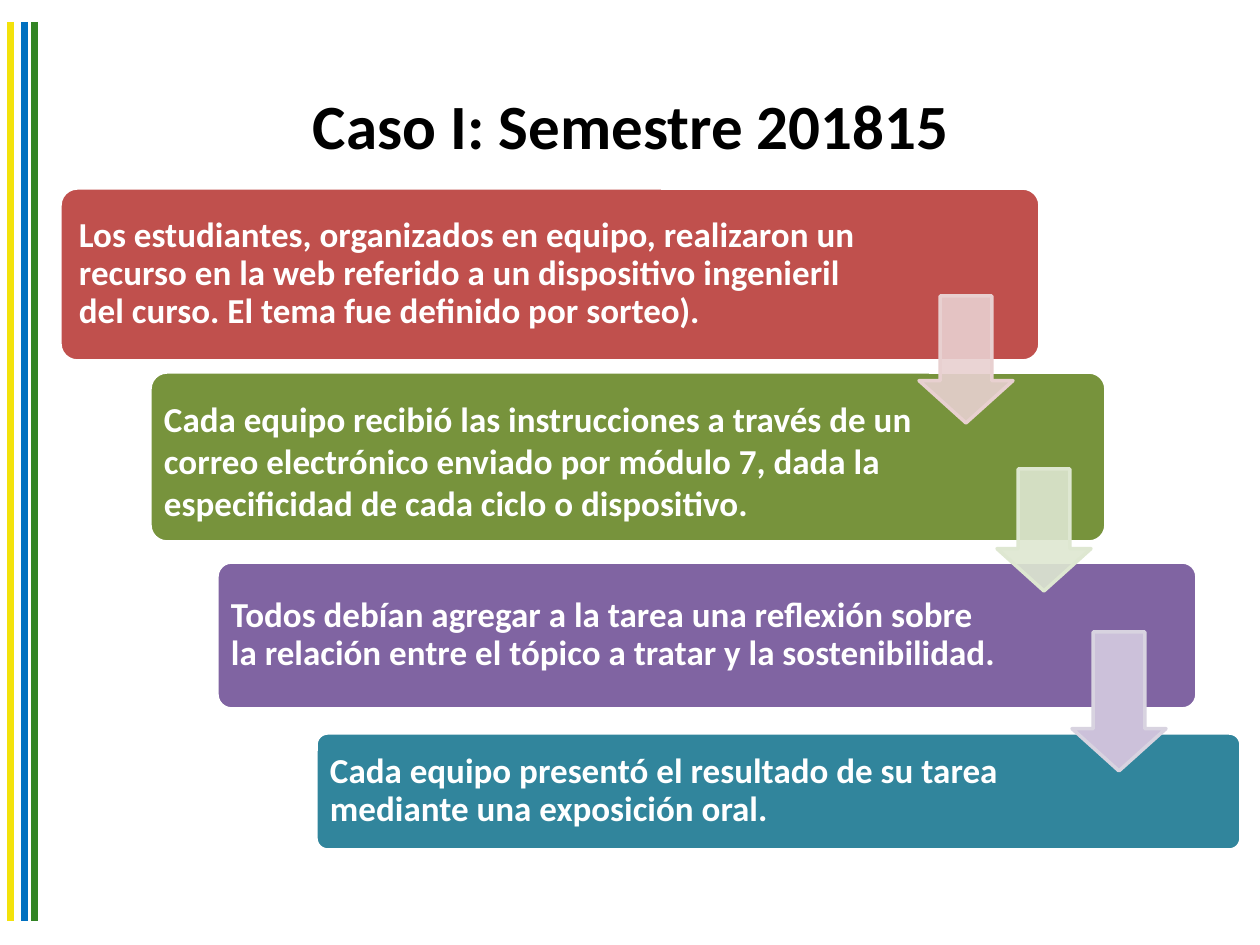
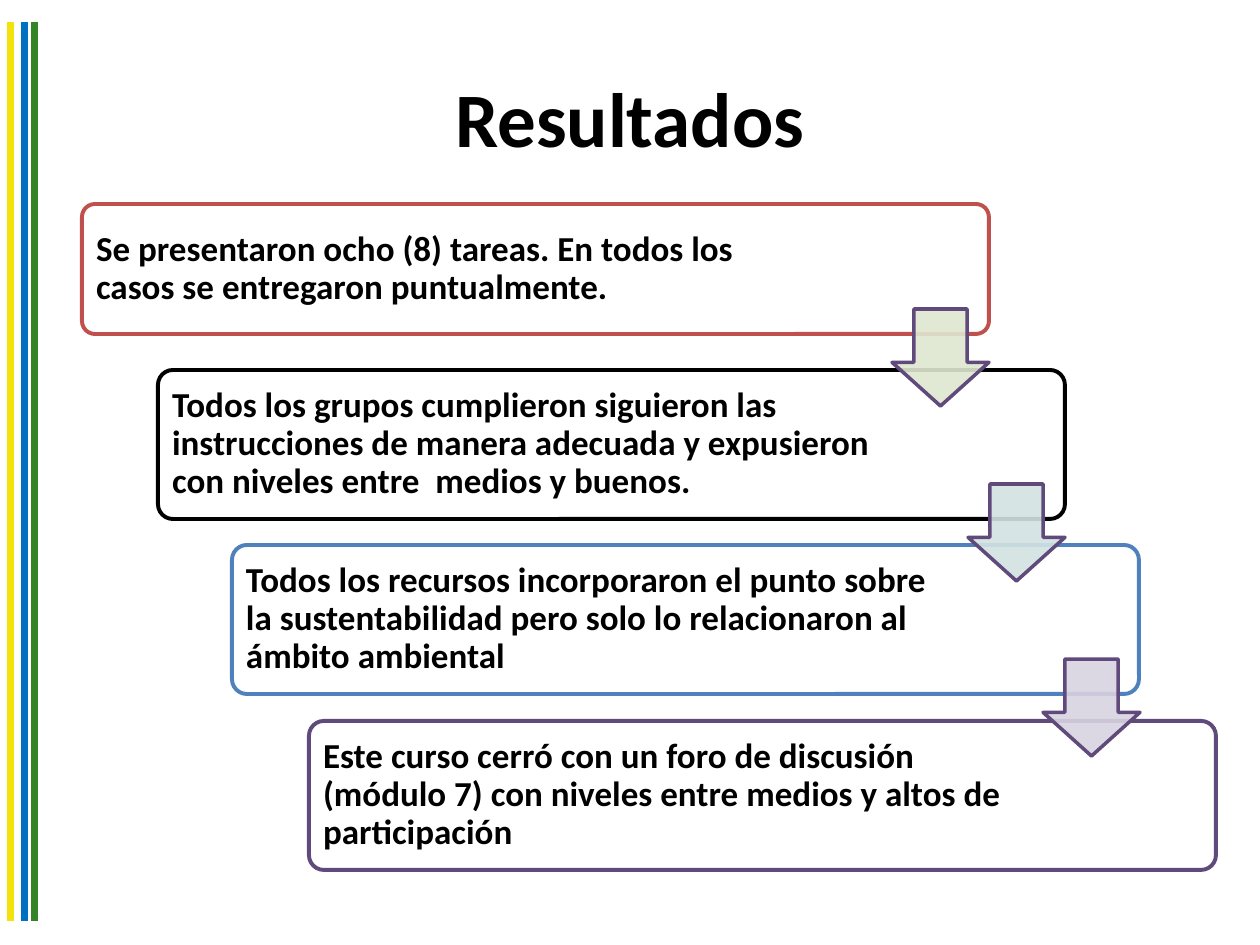
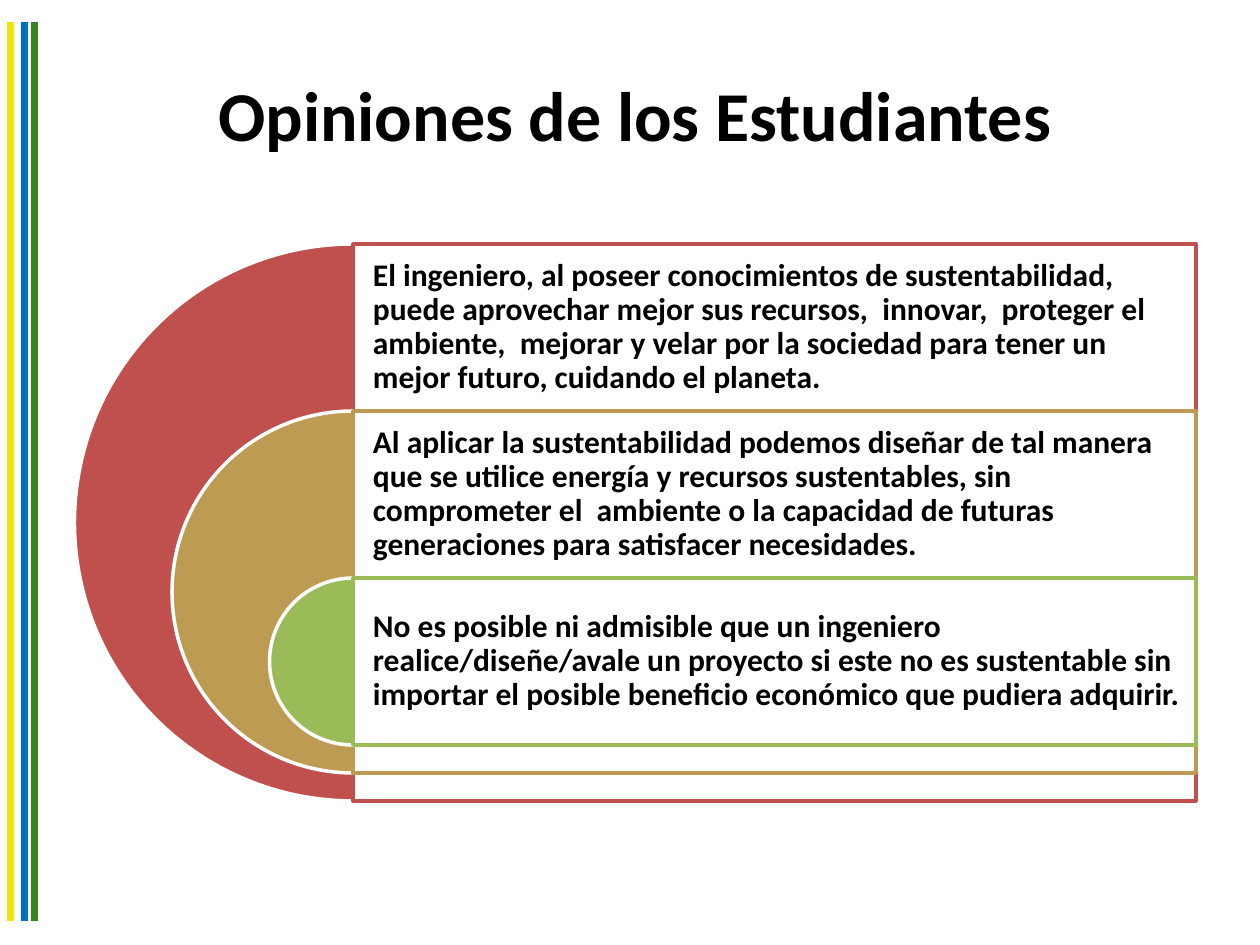
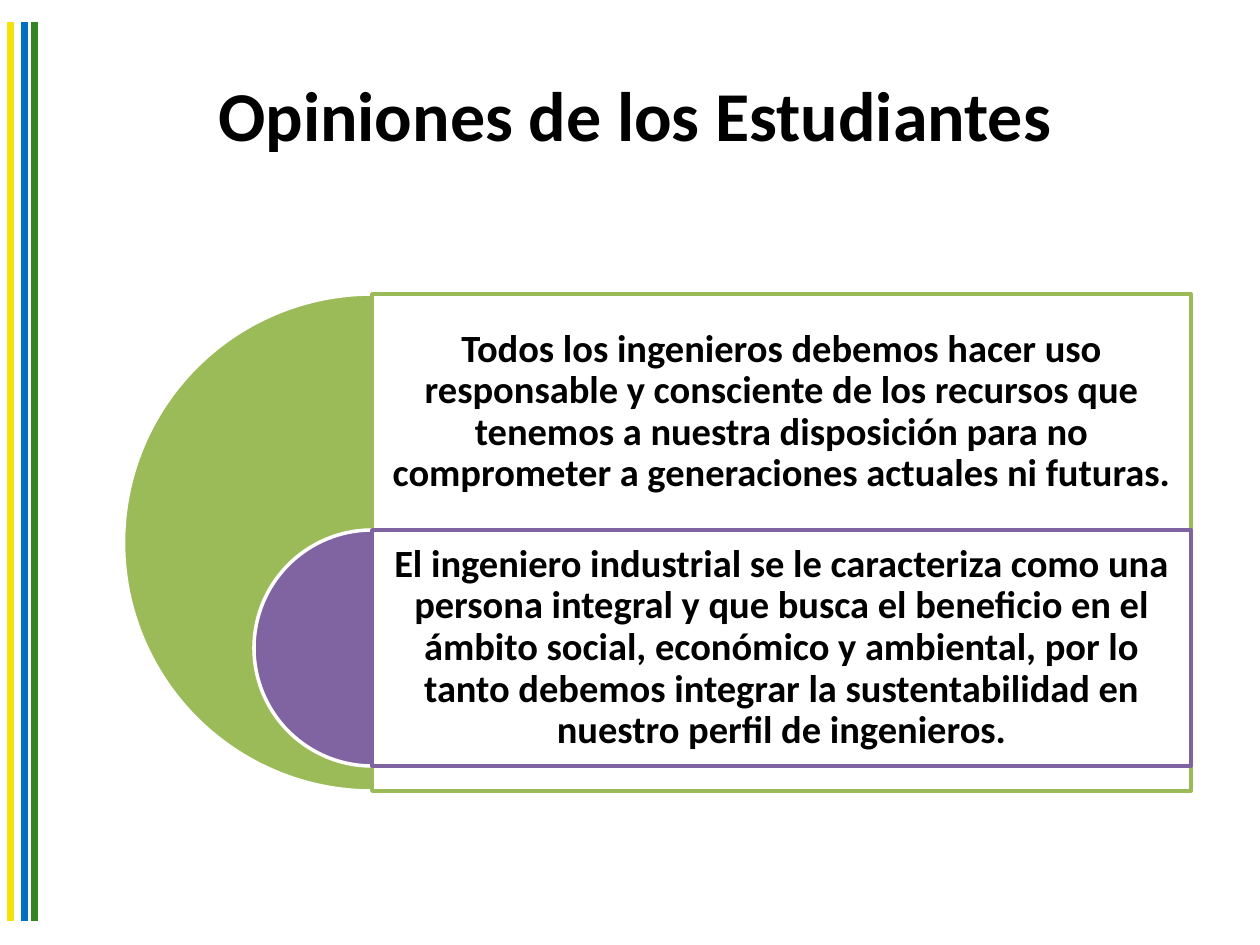
from lxml.etree import SubElement
from pptx import Presentation
from pptx.dml.color import RGBColor
from pptx.enum.shapes import MSO_CONNECTOR, MSO_SHAPE
from pptx.enum.text import MSO_ANCHOR, PP_ALIGN
from pptx.oxml.ns import qn
from pptx.util import Emu, Pt

FONT = "Calibri"
PX_PER_INCH = 126
TITLE_ONLY = 5

COLORS = {
    "white": "FFFFFF", "black": "000000",
    "stripe_yellow": "F3E20B", "stripe_blue": "0070C0", "stripe_green": "328424",
    "red": "C0504D", "olive": "77933C", "purple": "8064A2", "teal": "31859C",
    "blue": "4F81BD", "violet": "604A7B", "gold": "BD9B53", "green": "9BBB59",
    "pale_red": "E8D0D0", "pale_green": "DEE7D1", "pale_teal": "D2E3E2",
    "pale_purple": "D8D3E0", "lilac": "CCC1DA",
}

STRIPES = [(11, "stripe_yellow"), (25, "stripe_blue"), (35, "stripe_green")]
STRIPE_TOP, STRIPE_BOTTOM = 22, 921

STAIRS = [
    {
        "title": ("Caso I: Semestre 201815", 36, (64, 45, 1134, 158)),
        "text_color": "white",
        "steps": [
            ("Los estudiantes, organizados en equipo, realizaron un recurso en la web referido a un "
             "dispositivo ingenieril del curso. El tema fue definido por sorteo).",
             (60, 188, 980, 173), 801, "red", "white", (15, 5, 0, 5), 0.9),
            ("Cada equipo recibió las instrucciones a través de un correo electrónico enviado por "
             "módulo 7, dada la especificidad de cada ciclo o dispositivo.",
             (150, 372, 956, 170), 775, "olive", "white", (10, 14, 10, 6), 1.0),
            ("Todos debían agregar a la tarea una reflexión sobre la relación entre el tópico a "
             "tratar y la sostenibilidad.",
             (217, 562, 980, 147), 791, "purple", "white", (10, 10, 10, 10), 0.9),
            ("Cada equipo presentó el resultado de su tarea mediante una exposición oral.",
             (316, 733, 925, 117), 746, "teal", "white", (10, 10, 10, 10), 0.9),
        ],
        "step_line": 2,
        "arrows": [
            ((919, 296, 94, 127), "pale_red", "pale_red", 90),
            ((997, 469, 94, 122), "pale_green", "pale_green", 90),
            ((1072, 632, 94, 139), "lilac", "pale_purple", 100),
        ],
    },
    {
        "title": ("Resultados", 44, (63, 38, 1134, 158)),
        "text_color": "black",
        "steps": [
            ("Se presentaron ocho (8) tareas. En todos los casos se entregaron puntualmente.",
             (82, 204, 907, 130), 736, "white", "red", (10, 10, 10, 10), 0.9),
            ("Todos los grupos cumplieron siguieron las instrucciones de manera adecuada y "
             "expusieron con niveles entre  medios y buenos.",
             (158, 370, 907, 149), 726, "white", "black", (10, 10, 10, 10), 0.9),
            ("Todos los recursos incorporaron el punto sobre la sustentabilidad pero solo lo "
             "relacionaron al ámbito ambiental",
             (232, 545, 907, 149), 727, "white", "blue", (10, 10, 10, 10), 0.9),
            ("Este curso cerró con un foro de discusión (módulo 7) con niveles entre medios y altos "
             "de participación",
             (309, 721, 907, 149), 726, "white", "violet", (10, 10, 10, 10), 0.9),
        ],
        "step_line": 2.25,
        "arrows": [
            ((892, 309, 97, 97), "pale_green", "violet", 90),
            ((968, 484, 97, 97), "pale_teal", "violet", 90),
            ((1043, 659, 97, 97), "pale_purple", "violet", 90),
        ],
    },
]

OPINIONS_TITLE = ("Opiniones de los Estudiantes", 40, (68, 55, 1134, 117))
OPINIONS = [
    {
        "left": 353, "top": 244, "width": 843, "band": 167, "rim": 28,
        "size": 18, "align": PP_ALIGN.LEFT, "insets": (20, 9, 9, 9),
        "items": [
            ("El ingeniero, al poseer conocimientos de sustentabilidad, puede aprovechar mejor sus "
             "recursos,  innovar,  proteger el ambiente,  mejorar y velar por la sociedad para tener "
             "un mejor futuro, cuidando el planeta.", "red"),
            ("Al aplicar la sustentabilidad podemos diseñar de tal manera que se utilice energía y "
             "recursos sustentables, sin comprometer el  ambiente o la capacidad de futuras "
             "generaciones para satisfacer necesidades.", "gold"),
            ("No es posible ni admisible que un ingeniero realice/diseñe/avale un proyecto si este no "
             "es sustentable sin importar el posible beneficio económico que pudiera adquirir.",
             "green"),
        ],
    },
    {
        "left": 372, "top": 294, "width": 819, "band": 236, "rim": 25,
        "size": 22, "align": PP_ALIGN.CENTER, "insets": (11, 11, 11, 11),
        "items": [
            ("Todos los ingenieros debemos hacer uso responsable y consciente de los recursos que "
             "tenemos a nuestra disposición para no comprometer a generaciones actuales ni futuras.",
             "green"),
            ("El ingeniero industrial se le caracteriza como una persona integral y que busca el "
             "beneficio en el ámbito social, económico y ambiental, por lo tanto debemos integrar la "
             "sustentabilidad en nuestro perfil de ingenieros.", "purple"),
        ],
    },
]


def px(value):
    return Emu(round(value * 914400 / PX_PER_INCH))


def place(frame):
    return [px(value) for value in frame]


def rgb(name):
    return RGBColor.from_string(COLORS[name])


def format_text(text_frame, text, size, color, align, spacing=1.0):
    text_frame.text = text
    text_frame.word_wrap = True
    text_frame.vertical_anchor = MSO_ANCHOR.MIDDLE
    para = text_frame.paragraphs[0]
    para.alignment = align
    para.line_spacing = spacing
    for span in para.runs:
        span.font.name = FONT
        span.font.size = Pt(size)
        span.font.bold = True
        span.font.color.rgb = rgb(color)


def add_text(page, frame, text, size, color, align, insets, spacing=0.9):
    text_frame = page.shapes.add_textbox(*place(frame)).text_frame
    (text_frame.margin_left, text_frame.margin_top,
     text_frame.margin_right, text_frame.margin_bottom) = place(insets)
    format_text(text_frame, text, size, color, align, spacing)


def add_figure(page, kind, frame, fill, line, line_width=2, adjustments=(), opacity=100):
    shape = page.shapes.add_shape(kind, *place(frame))
    shape.shadow.inherit = False
    for index, value in enumerate(adjustments):
        shape.adjustments[index] = value
    shape.fill.solid()
    shape.fill.fore_color.rgb = rgb(fill)
    shape.line.color.rgb = rgb(line)
    shape.line.width = Pt(line_width)
    if opacity < 100:
        color = shape.element.spPr.find(qn("a:solidFill"))[0]
        SubElement(color, qn("a:alpha")).set("val", str(opacity * 1000))


def add_page(deck, title):
    text, size, frame = title
    page = deck.slides.add_slide(deck.slide_layouts[TITLE_ONLY])
    heading = page.shapes.title
    heading.left, heading.top, heading.width, heading.height = place(frame)
    format_text(heading.text_frame, text, size, "black", PP_ALIGN.CENTER)
    return page


def move_stripes_to_layout(page):
    for x, color in STRIPES:
        stripe = page.shapes.add_connector(
            MSO_CONNECTOR.STRAIGHT, *place((x, STRIPE_TOP, x, STRIPE_BOTTOM)))
        stripe.line.color.rgb = rgb(color)
        stripe.line.width = Pt(4)
        SubElement(stripe.element.spPr, qn("a:effectLst"))
        page.slide_layout.shapes.element.append(stripe.element)


def add_stairs(deck, content):
    page = add_page(deck, content["title"])
    for text, frame, text_width, fill, line, insets, spacing in content["steps"]:
        left, top, _, height = frame
        add_figure(page, MSO_SHAPE.ROUNDED_RECTANGLE, frame, fill, line,
                   content["step_line"], [0.1])
        add_text(page, (left + 4, top + 4, text_width, height - 8), text, 20,
                 content["text_color"], PP_ALIGN.LEFT, insets, spacing)
    for frame, fill, line, opacity in content["arrows"]:
        add_figure(page, MSO_SHAPE.DOWN_ARROW, frame, fill, line,
                   adjustments=[0.55, 0.45], opacity=opacity)


def add_opinions(deck, content):
    page = add_page(deck, OPINIONS_TITLE)
    left, width, band = content["left"], content["width"], content["band"]
    last = len(content["items"]) - 1
    for index, (text, color) in enumerate(content["items"]):
        top = content["top"] + index * band
        diameter = band + (last - index) * (band + content["rim"])
        add_figure(page, MSO_SHAPE.PIE, (left - diameter / 2, top, diameter, diameter),
                   color, "white", adjustments=[54, 162])
        add_figure(page, MSO_SHAPE.RECTANGLE, (left, top, width, diameter),
                   "white", color, opacity=90)
        add_text(page, (left, top, width, band), text, content["size"], "black",
                 content["align"], content["insets"])


def main():
    deck = Presentation()
    deck.slide_width, deck.slide_height = px(1260), px(945)
    for content in STAIRS:
        add_stairs(deck, content)
    for content in OPINIONS:
        add_opinions(deck, content)
    move_stripes_to_layout(deck.slides[0])
    deck.save("out.pptx")


if __name__ == "__main__":
    main()
